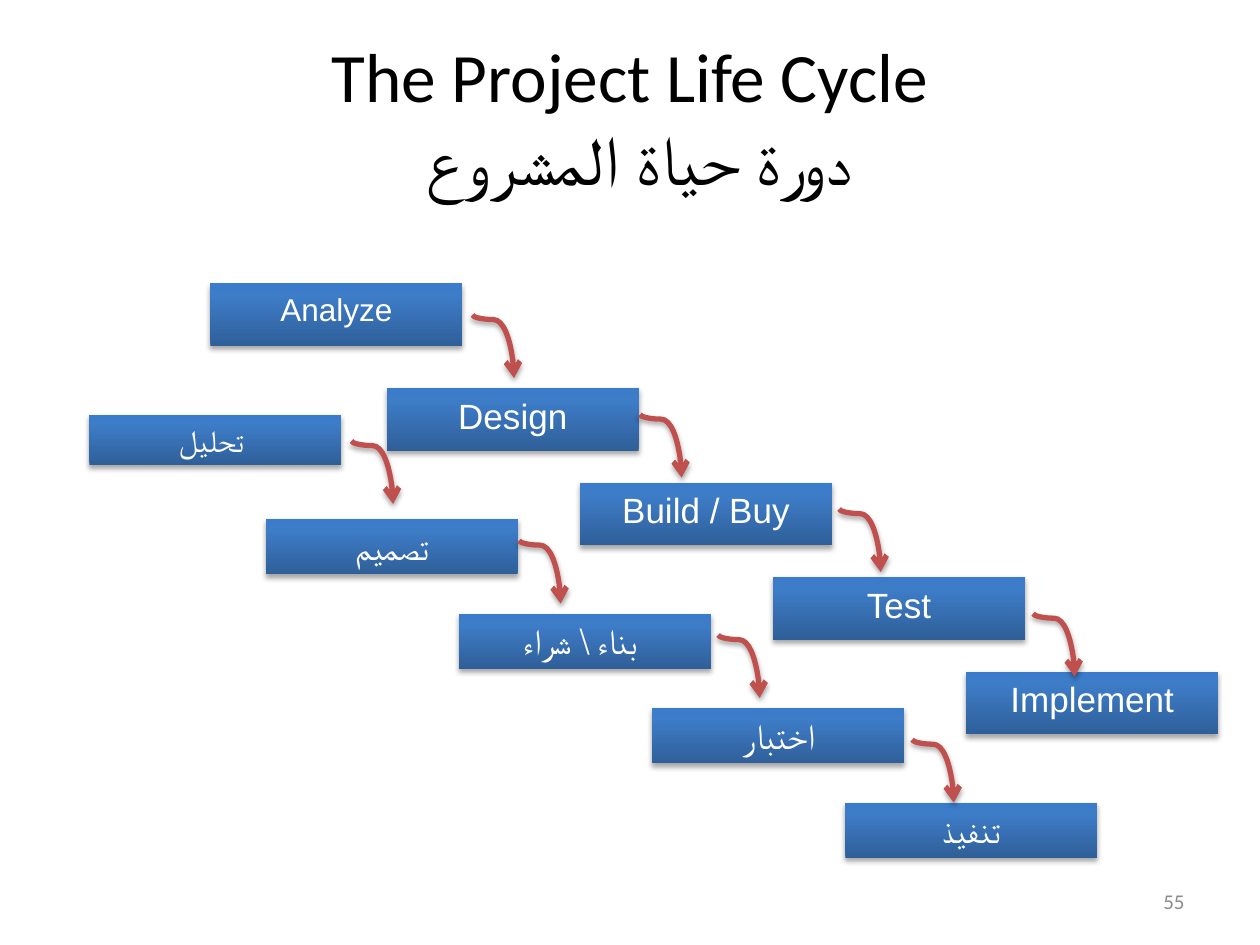
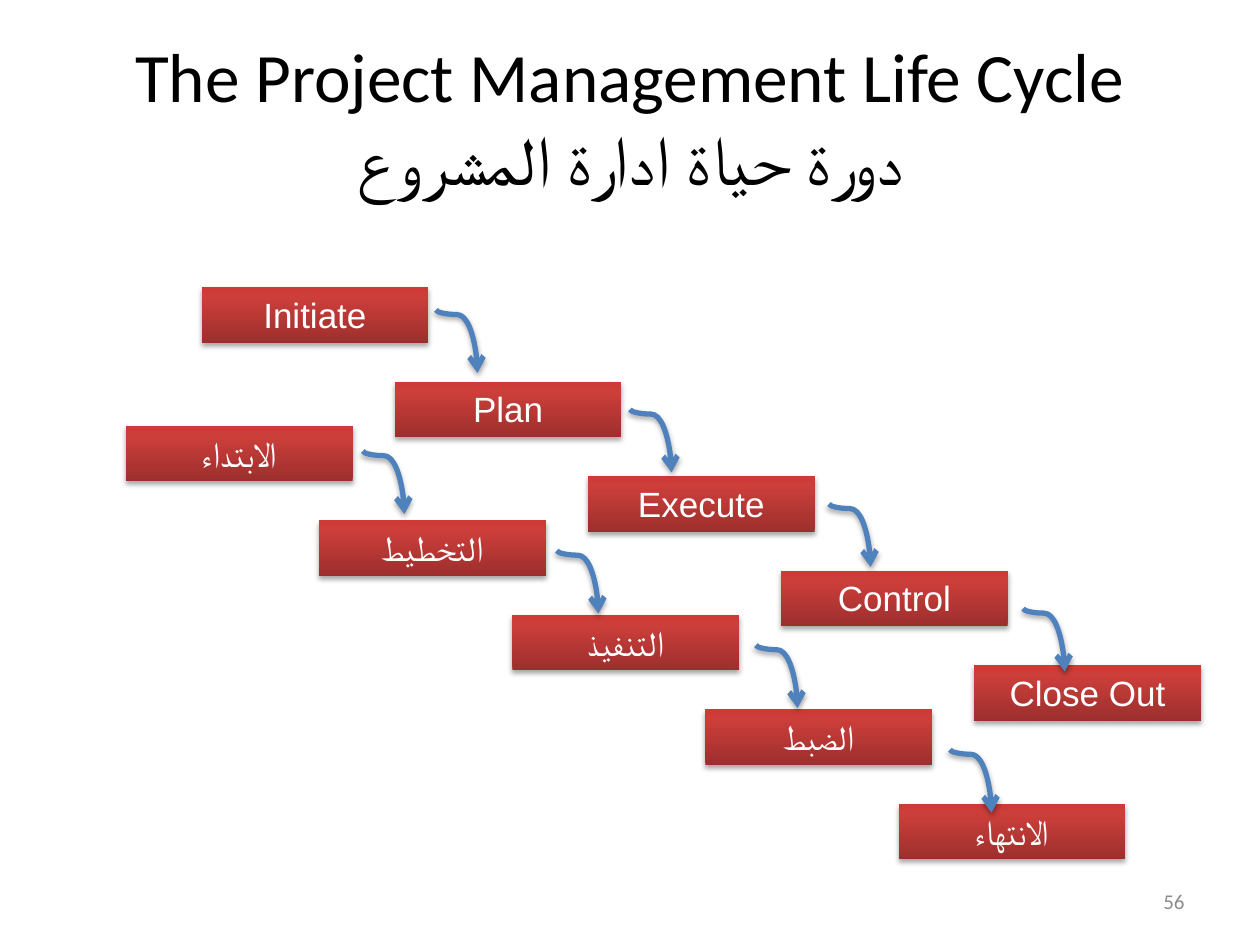
from copy import deepcopy
from itertools import accumulate

from lxml.etree import SubElement
from pptx import Presentation
from pptx.dml.color import RGBColor
from pptx.enum.shapes import MSO_CONNECTOR as Connector, MSO_SHAPE as Shape
from pptx.enum.text import MSO_ANCHOR as Anchor, MSO_AUTO_SIZE as AutoSize, PP_ALIGN as Align
from pptx.oxml.ns import qn
from pptx.util import Inches, Pt

COLORS = {
    "title": "000000",
    "number": "8C8C8C",
    "label": "FFFFFF",
    "shadow": "000000",
    "red": "C0504D",
    "blue": "4F81BD",
}
GRADIENTS = {
    "blue": ((0, "2F5F99"), (80, "3D7CC7"), (100, "3A7CCB")),
    "red": ((0, "9C2F2D"), (80, "CB3E3A"), (100, "CE3B37")),
}
BOX_STEP = (1.533, 0.75)
ARROW_STEPS = [(1.58, 0.75), (1.54, 0.83)]
ARROW_WIDTH, ARROW_HEIGHT = 0.33, 0.5


def write(frame, text, size, color, font="Arial", align=Align.CENTER,
          anchor=Anchor.TOP, rtl=False):
    frame.word_wrap = True
    frame.auto_size = AutoSize.NONE
    frame.vertical_anchor = anchor
    paragraph = frame.paragraphs[0]
    paragraph.text = text
    paragraph.alignment = align
    if rtl:
        paragraph._p.get_or_add_pPr().set("rtl", "1")
    for run in paragraph.runs:
        run.font.size = Pt(size)
        run.font.name = font
        run.font.color.rgb = RGBColor.from_string(COLORS[color])
    for line_break in paragraph._p.findall(qn("a:br")):
        line_break.insert(0, deepcopy(paragraph.runs[0]._r.rPr))


def add_color(parent, color):
    return SubElement(parent, qn("a:srgbClr"), val=color)


def add_shadow(effects):
    shadow = SubElement(effects, qn("a:outerShdw"), blurRad=str(Pt(3.1)),
                        dist=str(Pt(1.8)), dir="5400000", rotWithShape="0")
    SubElement(add_color(shadow, COLORS["shadow"]), qn("a:alpha"), val="35000")


def walk(start, steps):
    return list(accumulate(steps, lambda a, b: (a[0] + b[0], a[1] + b[1]), initial=start))


class Deck:
    def __init__(self):
        self.presentation = Presentation()
        self.presentation.slide_width = Inches(10)
        self.presentation.slide_height = Inches(7.5)
        self.slide = None

    def new_slide(self, title, number, rtl=False):
        self.slide = self.presentation.slides.add_slide(self.presentation.slide_layouts[5])
        heading = self.slide.shapes.title
        heading.left, heading.top = Inches(0.5), Inches(0.3)
        heading.width, heading.height = Inches(9), Inches(1.25)
        write(heading.text_frame, title, 39.6, "title", font="Calibri",
              anchor=Anchor.MIDDLE, rtl=rtl)
        footer = self.slide.shapes.add_textbox(Inches(7.17), Inches(6.95), Inches(2.33), Inches(0.4))
        write(footer.text_frame, str(number), 12, "number", font="Calibri",
              align=Align.RIGHT, anchor=Anchor.MIDDLE)

    def box(self, text, left, top, width, height, gradient, size=20):
        shape = self.slide.shapes.add_shape(
            Shape.RECTANGLE, Inches(left), Inches(top), Inches(width), Inches(height))
        shape.line.fill.background()
        shape.fill.gradient()
        shape.fill.gradient_angle = 90
        properties = shape._element.spPr
        stops = properties.find(qn("a:gradFill")).find(qn("a:gsLst"))
        stops.clear()
        for position, color in GRADIENTS[gradient]:
            add_color(SubElement(stops, qn("a:gs"), pos=str(position * 1000)), color)
        shape.shadow.inherit = False
        add_shadow(properties.find(qn("a:effectLst")))
        write(shape.text_frame, text, size, "label")

    def arrow(self, left, top, color):
        center_x, center_y = left + ARROW_WIDTH / 2, top + ARROW_HEIGHT / 2
        connector = self.slide.shapes.add_connector(
            Connector.CURVE,
            Inches(center_x + ARROW_HEIGHT / 2), Inches(center_y - ARROW_WIDTH / 2),
            Inches(center_x - ARROW_HEIGHT / 2), Inches(center_y + ARROW_WIDTH / 2))
        connector.line.color.rgb = RGBColor.from_string(COLORS[color])
        connector.line.width = Pt(3)
        properties = connector._element.spPr
        properties.find(qn("a:xfrm")).set("rot", "16200000")
        adjustments = properties.find(qn("a:prstGeom")).find(qn("a:avLst"))
        SubElement(adjustments, qn("a:gd"), name="adj1", fmla="val 7400")
        SubElement(properties.find(qn("a:ln")), qn("a:tailEnd"), type="arrow")
        add_shadow(SubElement(properties, qn("a:effectLst")))

    def cascade(self, labels, start, arrow_start, gradient, arrow_color, width,
                height=0.44, first_height=0.44, first_size=20,
                first_step=BOX_STEP, first_arrow_step=(1.54, 0.79)):
        corners = walk(start, [first_step] + [BOX_STEP] * (len(labels) - 2))
        for index, (label, (left, top)) in enumerate(zip(labels, corners)):
            self.box(label, left, top, width, height if index else first_height,
                     gradient, 20 if index else first_size)
        for left, top in walk(arrow_start, [first_arrow_step] + ARROW_STEPS):
            self.arrow(left, top, arrow_color)


def main():
    deck = Deck()

    deck.new_slide("The Project Life Cycle\vدورة حياة المشروع ", 55, rtl=True)
    project = dict(gradient="blue", arrow_color="red", width=2, first_size=18,
                   first_step=(1.4, 0.83), first_arrow_step=(1.33, 0.79))
    deck.cascade(["Analyze", "Design", "Build / Buy", "Test", "Implement"],
                 (1.67, 2.25), (3.75, 2.5), height=0.5, first_height=0.5, **project)
    deck.cascade(["تحليل ", "تصميم", "بناء \\ شراء ", "اختبار", "تنفيذ"],
                 (0.71, 3.29), (2.79, 3.5), first_height=0.4, **project)

    deck.new_slide("The Project Management Life Cycle\vدورة حياة ادارة المشروع", 56)
    management = dict(gradient="red", arrow_color="blue", width=1.8)
    deck.cascade(["Initiate", "Plan", "Execute", "Control", "Close Out"],
                 (1.6, 2.28), (3.46, 2.46), **management)
    deck.cascade(["الابتداء", "التخطيط", "التنفيذ", "الضبط", "الانتهاء"],
                 (1, 3.38), (2.88, 3.58), **management)

    deck.presentation.save("out.pptx")


if __name__ == "__main__":
    main()
